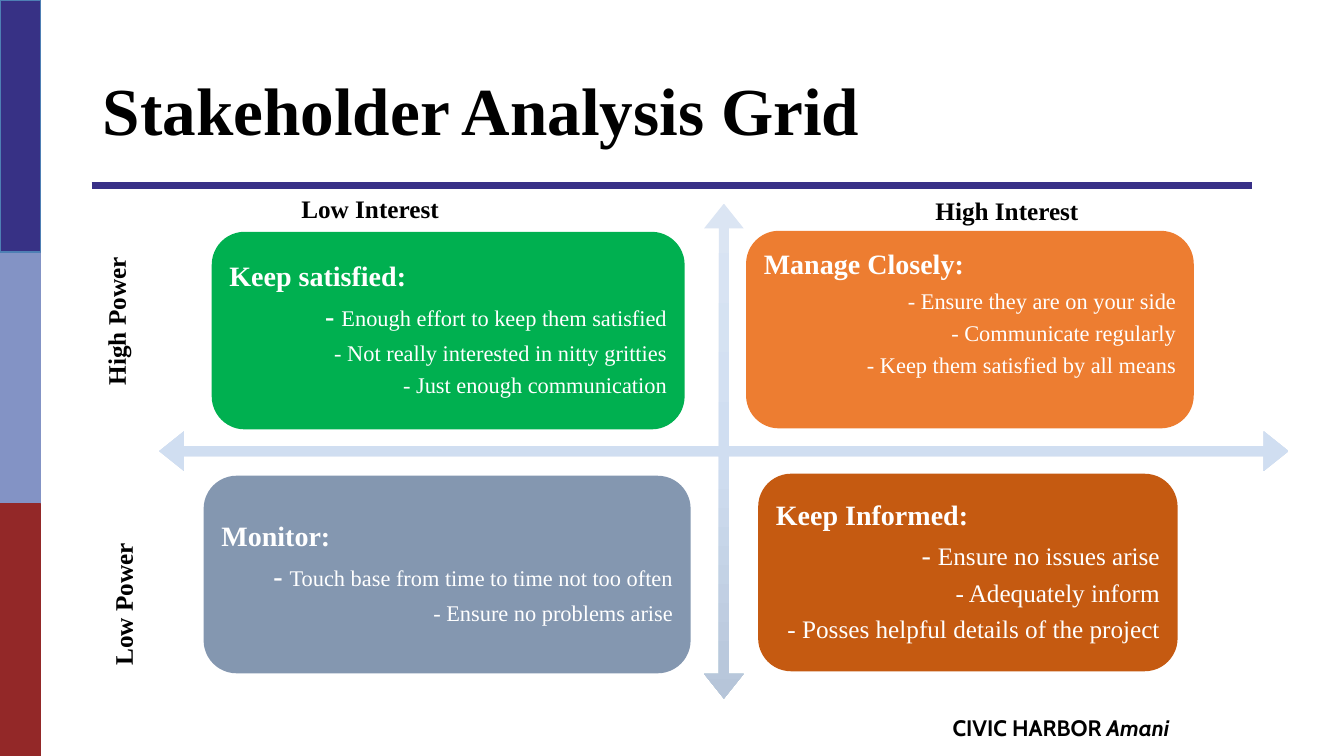
from lxml import etree
from pptx import Presentation
from pptx import util as u
from pptx.dml.color import RGBColor
from pptx.enum import shapes, text
from pptx.oxml.ns import qn

TITLE = "Stakeholder Analysis Grid"
FOOTER = ("CIVIC HARBOR ", "Amani")
STRIPES = [
    (2.5, "8393C5", "8393C5"),
    (5, "932828", "932828"),
    (0, "373185", "4E7FB4"),
]
QUADRANTS = [
    {"box": (2.1, 2.3, 4.69), "fill": "00B050", "head": "Keep satisfied:",
     "size": 16, "dash": (20, True), "foot": 0.08,
     "points": ["Enough effort to keep them satisfied",
                "Not really interested in nitty gritties",
                "Just enough communication"]},
    {"box": (7.4, 2.29, 4.44), "fill": "ED7D31", "head": "Manage Closely:",
     "size": 16, "dash": (16, False), "foot": 0.38,
     "points": ["Ensure they are on your side",
                "Communicate regularly",
                "Keep them satisfied by all means"]},
    {"box": (2.02, 4.72, 4.83), "fill": "8497B0", "head": "Monitor:",
     "size": 16, "dash": (20, True), "foot": 0.08,
     "points": ["Touch base from time to time not too often",
                "Ensure no problems arise"]},
    {"box": (7.52, 4.7, 4.16), "fill": "C55A11", "head": "Keep Informed:",
     "size": 18, "dash": (20, False), "foot": 0.08,
     "points": ["Ensure no issues arise",
                "Adequately inform",
                "Posses helpful details of the project"]},
]
AXIS_LABELS = [
    ("High Interest", (9.18, 1.89, 1.65, 0.4), False),
    ("Low Interest", (2.89, 1.87, 1.65, 0.4), False),
    ("Low Power", (1.02, 5.08, 0.5, 1.62), True),
    ("High Power", (0.95, 2.3, 0.5, 1.62), True),
]
THEME = {
    "font": "Times New Roman", "footer_font": "Cabin",
    "ink": "000000", "light": "FFFFFF", "rule": "383087",
    "arrow": [(0, "DBE5F3"), (50, "D0DEF1"), (100, "B6C5D9")],
    "title": 48, "head": 20, "label": 18, "footer": 16,
}


def inches(box):
    return [u.Inches(v) for v in box]


def style(font, size, color, bold=False, name=THEME["font"]):
    font.name, font.size, font.bold = name, u.Pt(size), bold
    font.color.rgb = RGBColor.from_string(color)


def add_shape(slide, kind, box, fill=None, line=None):
    sp = slide.shapes.add_shape(kind, *inches(box))
    sp.shadow.inherit = False
    if fill:
        sp.fill.solid()
        sp.fill.fore_color.rgb = RGBColor.from_string(fill)
    if line:
        sp.line.color.rgb = RGBColor.from_string(line)
        sp.line.width = u.Pt(1)
    else:
        sp.line.fill.background()
    return sp


def add_rule(slide):
    line = slide.shapes.add_connector(
        shapes.MSO_CONNECTOR.STRAIGHT, *inches((0.91, 1.84, 12.42, 1.84)))
    line.line.color.rgb = RGBColor.from_string(THEME["rule"])
    line.line.width = u.Pt(4.5)
    etree.SubElement(line._element.spPr, qn("a:effectLst"))


def add_axes(slide):
    sp = add_shape(slide, shapes.MSO_SHAPE.QUAD_ARROW, (1.58, 2.02, 11.2, 4.91))
    for i, value in enumerate((0.02, 0.04, 0.05)):
        sp.adjustments[i] = value
    sp.fill.gradient()
    sp.fill.gradient_angle = 270
    stops = sp._element.spPr.find(".//" + qn("a:gsLst"))
    for stop in list(stops):
        stops.remove(stop)
    for position, color in THEME["arrow"]:
        stop = etree.SubElement(stops, qn("a:gs"), pos=str(position * 1000))
        etree.SubElement(stop, qn("a:srgbClr"), val=color)


def space(p):
    p.line_spacing = 0.9
    after = etree.SubElement(p._p.get_or_add_pPr(), qn("a:spcAft"))
    etree.SubElement(after, qn("a:spcPct"), val="35000")


def add_quadrant(slide, quadrant):
    sp = add_shape(slide, shapes.MSO_SHAPE.ROUNDED_RECTANGLE,
                   (*quadrant["box"], 1.96), quadrant["fill"])
    tf = sp.text_frame
    tf.word_wrap = True
    tf.vertical_anchor = text.MSO_ANCHOR.MIDDLE
    tf.margin_left = tf.margin_right = tf.margin_top = u.Inches(0.08)
    tf.margin_bottom = u.Inches(quadrant["foot"])
    p = tf.paragraphs[0]
    p.text = quadrant["head"]
    p.alignment = text.PP_ALIGN.LEFT
    space(p)
    style(p.font, THEME["head"], THEME["light"], True)
    for i, point in enumerate(quadrant["points"]):
        p = tf.add_paragraph()
        p.alignment = text.PP_ALIGN.RIGHT
        space(p)
        body = (quadrant["size"], False)
        if i == 0 and quadrant["dash"] != body:
            for words, (size, bold) in (("- ", quadrant["dash"]), (point, body)):
                r = p.add_run()
                r.text = words
                style(r.font, size, THEME["light"], bold)
        else:
            p.text = "- " + point
            style(p.font, quadrant["size"], THEME["light"])


def add_label(slide, words, box, upright):
    tf = slide.shapes.add_textbox(*inches(box)).text_frame
    tf.word_wrap = True
    if upright:
        tf._txBody.bodyPr.set("vert", "vert270")
    p = tf.paragraphs[0]
    p.text = words
    style(p.font, THEME["label"], THEME["ink"], True)


def add_footer(slide):
    tf = slide.shapes.add_textbox(*inches((9.35, 7.04, 3.83, 0.36))).text_frame
    tf.word_wrap = True
    p = tf.paragraphs[0]
    for words, italic in zip(FOOTER, (False, True)):
        r = p.add_run()
        r.text = words
        r.font.italic = italic
    style(p.font, THEME["footer"], THEME["ink"], True, THEME["footer_font"])


def add_title(slide):
    title = slide.shapes.title
    title.left, title.top, title.width, title.height = inches((0.92, 0.4, 11.5, 1.45))
    tf = title.text_frame
    tf.vertical_anchor = text.MSO_ANCHOR.MIDDLE
    p = tf.paragraphs[0]
    p.text = TITLE
    p.alignment = text.PP_ALIGN.LEFT
    p.line_spacing = 0.9
    style(p.font, THEME["title"], THEME["ink"], True)


def main():
    prs = Presentation()
    prs.slide_width, prs.slide_height = inches((13.33, 7.5))
    slide = prs.slides.add_slide(prs.slide_layouts[5])
    for top, fill, line in STRIPES:
        add_shape(slide, shapes.MSO_SHAPE.RECTANGLE, (0, top, 0.4, 2.5), fill, line)
    add_rule(slide)
    add_footer(slide)
    add_title(slide)
    add_axes(slide)
    for quadrant in QUADRANTS:
        add_quadrant(slide, quadrant)
    for label in AXIS_LABELS:
        add_label(slide, *label)
    prs.save("out.pptx")


if __name__ == "__main__":
    main()
